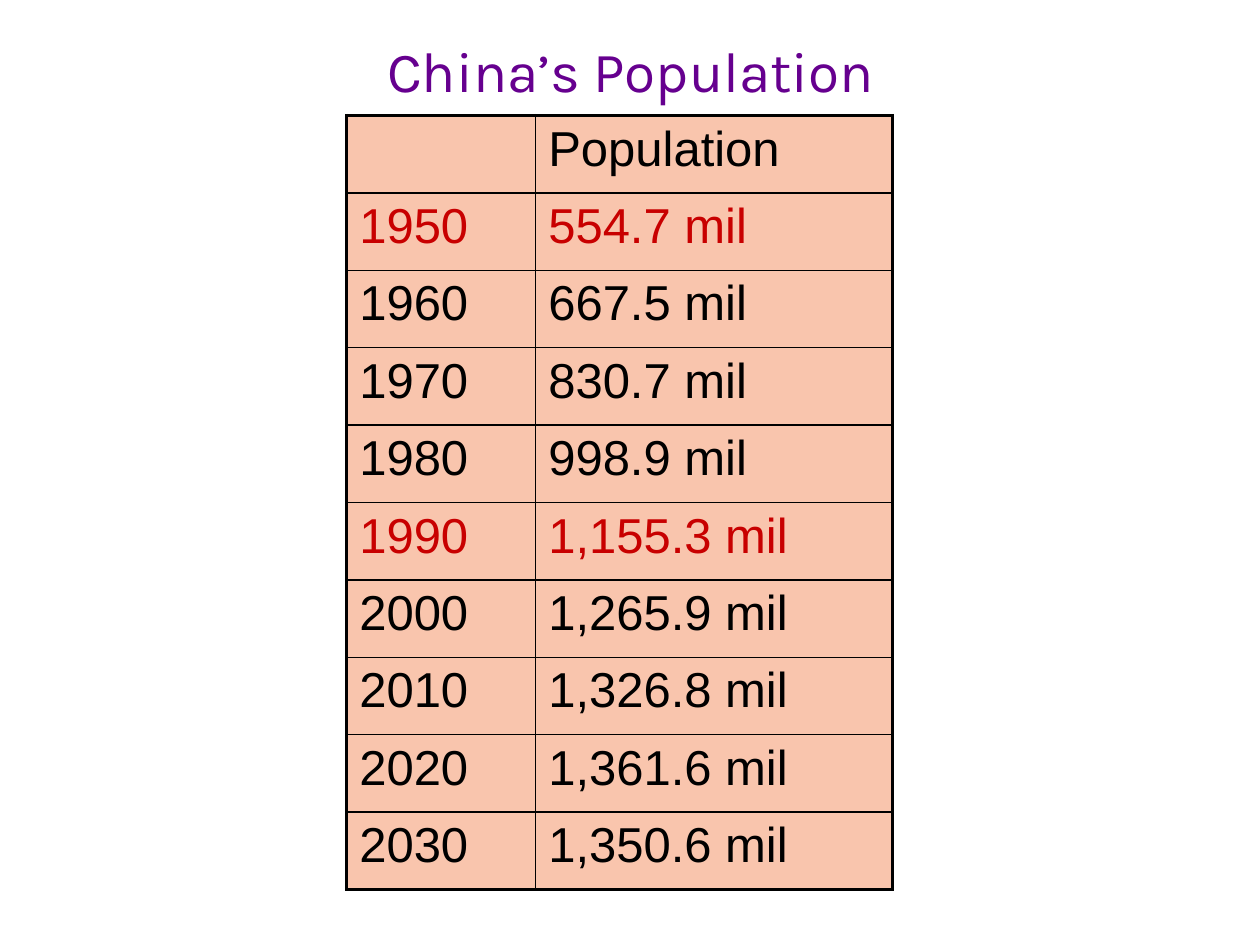
from lxml.etree import SubElement
from pptx import Presentation
from pptx.dml.color import RGBColor
from pptx.enum.text import MSO_ANCHOR, PP_ALIGN
from pptx.oxml import parse_xml
from pptx.oxml.ns import nsdecls, qn
from pptx.util import Cm, Pt

PURPLE = RGBColor(0x66, 0x00, 0x8F)
BLACK = RGBColor(0x00, 0x00, 0x00)
RED = RGBColor(0xC8, 0x00, 0x00)
ORANGE = RGBColor(0xF5, 0x8C, 0x5D)

TITLE = "China’s Population"
ROWS = [
    ("", "Population"),
    ("1950", "554.7 mil"),
    ("1960", "667.5 mil"),
    ("1970", "830.7 mil"),
    ("1980", "998.9 mil"),
    ("1990", "1,155.3 mil"),
    ("2000", "1,265.9 mil"),
    ("2010", "1,326.8 mil"),
    ("2020", "1,361.6 mil"),
    ("2030", "1,350.6 mil"),
]
RED_YEARS = {"1950", "1990"}
COLUMN_WIDTHS = [Cm(3.81), Cm(7.19)]
ROW_HEIGHT = Cm(1.56)
OUTER_LINE, INNER_LINE = Pt(2.25), Pt(1)


def write_text(frame, text, *, font, size, color, align=PP_ALIGN.LEFT):
    paragraph = frame.paragraphs[0]
    paragraph.alignment = align
    paragraph.font.size = Pt(size)
    if text:
        run = paragraph.add_run()
        run.text = text
        run.font.name = font
        run.font.size = Pt(size)
        run.font.color.rgb = color


def style_cell(cell, outer_sides):
    """Give a half-transparent fill and borders, thicker on the outer sides."""
    cell.fill.solid()
    cell.fill.fore_color.rgb = ORANGE
    properties = cell._tc.get_or_add_tcPr()
    fill_color = properties.find(qn("a:solidFill")).find(qn("a:srgbClr"))
    SubElement(fill_color, qn("a:alpha"), val="50000")
    for position, side in enumerate("LRTB"):
        width = OUTER_LINE if side in outer_sides else INNER_LINE
        properties.insert(position, parse_xml(
            f'<a:ln{side} {nsdecls("a")} w="{width}"><a:solidFill>'
            f'<a:srgbClr val="{BLACK}"/></a:solidFill></a:ln{side}>'))


def add_title(slide):
    title = slide.shapes.add_textbox(Cm(1.07), Cm(0.71), Cm(23.29), Cm(1.4))
    frame = title.text_frame
    frame.word_wrap = True
    frame.vertical_anchor = MSO_ANCHOR.MIDDLE
    write_text(frame, TITLE, font="Karla", size=32.4, color=PURPLE,
               align=PP_ALIGN.CENTER)


def add_population_table(slide):
    last_row, last_column = len(ROWS) - 1, len(COLUMN_WIDTHS) - 1
    table = slide.shapes.add_table(
        len(ROWS), len(COLUMN_WIDTHS), Cm(6.99), Cm(2.33),
        sum(COLUMN_WIDTHS), ROW_HEIGHT * len(ROWS)).table
    table.first_row = table.horz_banding = False
    for column, width in zip(table.columns, COLUMN_WIDTHS):
        column.width = width
    for row_index, values in enumerate(ROWS):
        table.rows[row_index].height = ROW_HEIGHT
        color = RED if values[0] in RED_YEARS else BLACK
        for column_index, text in enumerate(values):
            cell = table.cell(row_index, column_index)
            edges = {"L": column_index == 0, "R": column_index == last_column,
                     "T": row_index == 0, "B": row_index == last_row}
            style_cell(cell, [side for side, outer in edges.items() if outer])
            write_text(cell.text_frame, text, font="Arial", size=28, color=color)


def main():
    presentation = Presentation()
    presentation.slide_width, presentation.slide_height = Cm(25.4), Cm(19.05)
    slide = presentation.slides.add_slide(presentation.slide_layouts[6])
    add_title(slide)
    add_population_table(slide)
    presentation.save("out.pptx")


if __name__ == "__main__":
    main()
